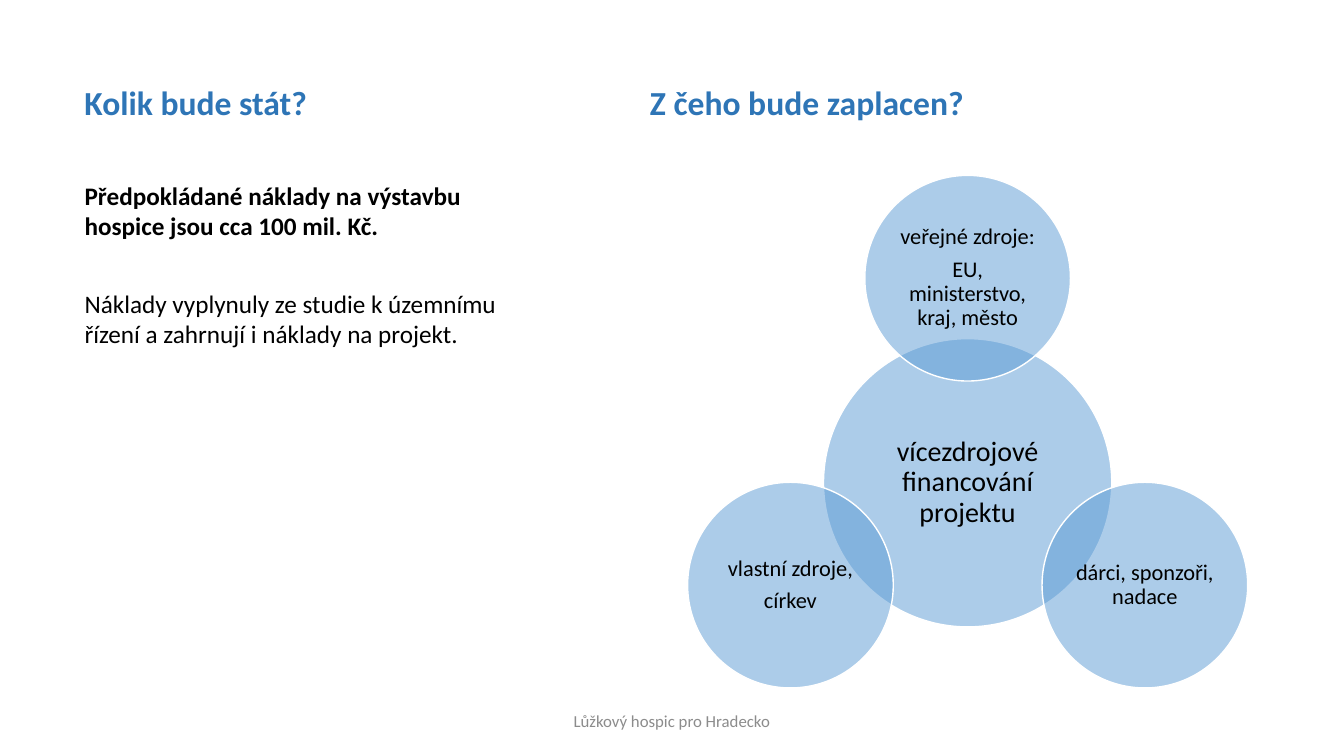
from dataclasses import dataclass
from math import cos, radians, sin

from lxml.etree import SubElement
from pptx import Presentation
from pptx.dml.color import RGBColor
from pptx.enum.shapes import MSO_SHAPE
from pptx.enum.text import MSO_ANCHOR, PP_ALIGN
from pptx.oxml.ns import qn
from pptx.slide import Slide
from pptx.text.text import TextFrame
from pptx.util import Inches, Pt

# The slide is a grid of 160 columns by 90 rows of square cells.
COLS, ROWS = 160, 90
CELL = Inches(7.5) / ROWS

HEADING = RGBColor(0x2E, 0x75, 0xB6)
BLACK = RGBColor(0x00, 0x00, 0x00)
GRAY = RGBColor(0x8C, 0x8C, 0x8C)
WHITE = RGBColor(0xFF, 0xFF, 0xFF)
CIRCLE = RGBColor(0x5B, 0x9B, 0xD5)

LEFT_COL, RIGHT_COL = 8.88, 76.2
HUB_X, HUB_Y = 115.2, 57.48
ORBIT = 24.36


@dataclass(frozen=True)
class Style:
    size: float
    color: RGBColor = BLACK
    bold: bool = False
    align: PP_ALIGN = PP_ALIGN.LEFT
    line_spacing: float = 1.0


@dataclass(frozen=True)
class Line:
    text: str
    style: Style
    before: float = 0


@dataclass(frozen=True)
class Block:
    col: float
    row: float
    cols: float
    rows: float
    anchor: MSO_ANCHOR
    lines: tuple[Line, ...]


@dataclass(frozen=True)
class Source:
    angle: float
    lines: tuple[Line, ...]


TITLE = Style(24, HEADING, bold=True, line_spacing=0.9)
COST = Style(18, bold=True)
BODY = Style(18)
FOOTER = Style(12, GRAY, align=PP_ALIGN.CENTER)
HUB = Style(20, align=PP_ALIGN.CENTER, line_spacing=0.9)
SOURCE = Style(16, align=PP_ALIGN.CENTER, line_spacing=0.9)

BLOCKS = (
    Block(LEFT_COL, 7.68, 55, 7.56, MSO_ANCHOR.BOTTOM,
          (Line("Kolik bude stát?", TITLE),)),
    Block(RIGHT_COL, 7.68, 55, 7.56, MSO_ANCHOR.BOTTOM,
          (Line("Z čeho bude zaplacen?", TITLE),)),
    Block(53, 83.4, 54, 4.8, MSO_ANCHOR.MIDDLE,
          (Line("Lůžkový hospic pro Hradecko", FOOTER),)),
    Block(LEFT_COL, 20.88, 51.84, 56.16, MSO_ANCHOR.TOP,
          (Line("Předpokládané náklady na výstavbu hospice jsou cca 100 mil. Kč.", COST),
           Line("Náklady vyplynuly ze studie k územnímu řízení a zahrnují "
                "i náklady na projekt.", BODY, before=34))),
)

SOURCES = (
    Source(-90, (Line("veřejné zdroje:", SOURCE),
                 Line("EU, ministerstvo, kraj, město", SOURCE, before=6))),
    Source(30, (Line("dárci, sponzoři, nadace", SOURCE),)),
    Source(150, (Line("vlastní zdroje,", SOURCE),
                 Line("církev", SOURCE, before=6))),
)


def cells(n: float) -> int:
    return round(n * CELL)


def write(tf: TextFrame, lines: tuple[Line, ...], anchor: MSO_ANCHOR) -> None:
    tf.word_wrap = True
    tf.vertical_anchor = anchor
    for i, line in enumerate(lines):
        p = tf.paragraphs[0] if i == 0 else tf.add_paragraph()
        style = line.style
        p.text = line.text
        p.alignment = style.align
        p.line_spacing = style.line_spacing
        p.space_before = Pt(line.before)
        p.font.name = "Calibri"
        p.font.size = Pt(style.size)
        p.font.bold = style.bold
        p.font.color.rgb = style.color


def add_block(s: Slide, b: Block) -> None:
    box = s.shapes.add_textbox(*map(cells, (b.col, b.row, b.cols, b.rows)))
    write(box.text_frame, b.lines, b.anchor)


def add_circle(s: Slide, x: float, y: float, diameter: float,
               lines: tuple[Line, ...]) -> None:
    """Draw a half-transparent circle centred on grid point x, y."""
    box = (x - diameter / 2, y - diameter / 2, diameter, diameter)
    sp = s.shapes.add_shape(MSO_SHAPE.OVAL, *map(cells, box))
    sp.shadow.inherit = False
    sp.fill.solid()
    sp.fill.fore_color.rgb = CIRCLE
    color = sp.fill._xPr.find(qn("a:solidFill"))[0]
    SubElement(color, qn("a:alpha"), val="50000")
    sp.line.color.rgb = WHITE
    sp.line.width = Pt(1)
    tf = sp.text_frame
    tf.margin_left = tf.margin_right = tf.margin_top = tf.margin_bottom = Inches(0.02)
    write(tf, lines, MSO_ANCHOR.MIDDLE)


def main() -> None:
    prs = Presentation()
    prs.slide_width, prs.slide_height = cells(COLS), cells(ROWS)
    s = prs.slides.add_slide(prs.slide_layouts[6])
    for block in BLOCKS:
        add_block(s, block)
    add_circle(s, HUB_X, HUB_Y, 34.32,
               (Line("vícezdrojové financování projektu", HUB),))
    for source in SOURCES:
        turn = radians(source.angle)
        add_circle(s, HUB_X + ORBIT * cos(turn), HUB_Y + ORBIT * sin(turn),
                   24.48, source.lines)
    prs.save("out.pptx")


if __name__ == "__main__":
    main()
